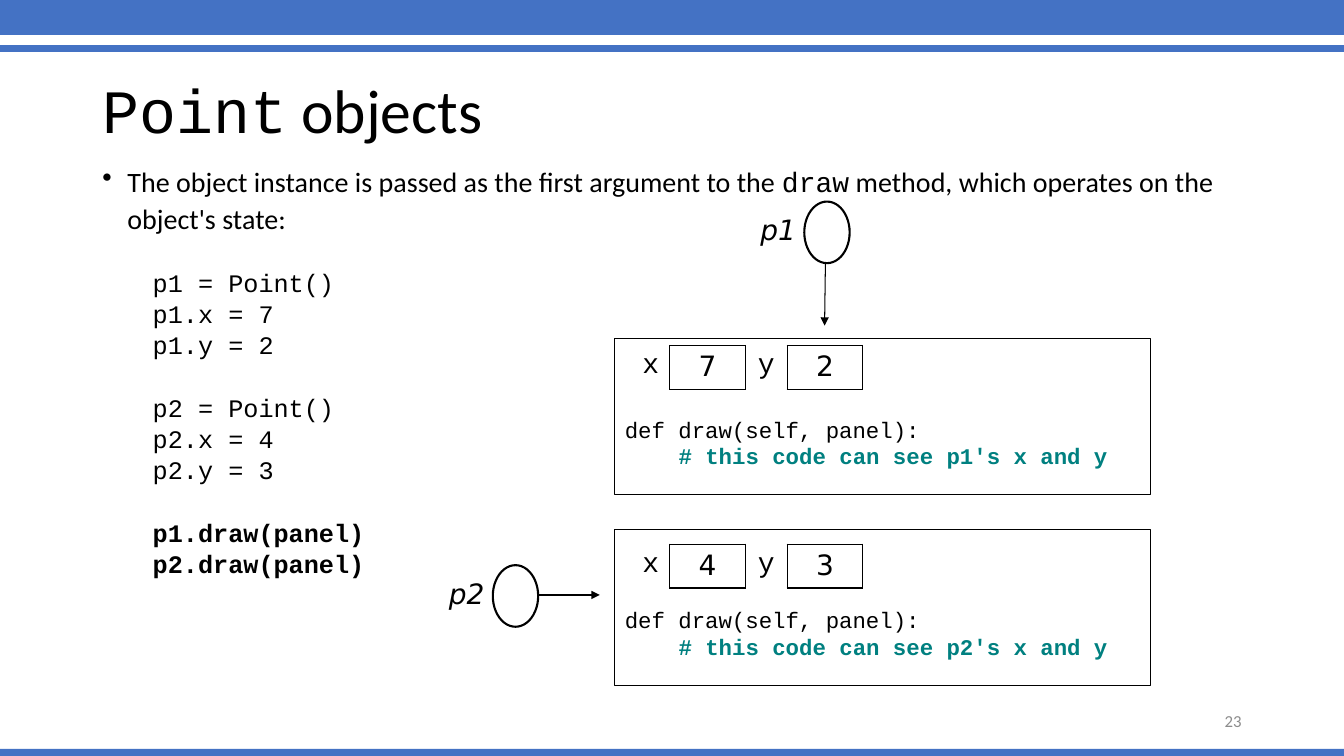
from lxml import etree
from pptx import Presentation
from pptx import util as u
from pptx.dml.color import RGBColor
from pptx.enum import shapes, text
from pptx.oxml import ns

COLOURS = {"blue": "4472C4", "black": "000000", "white": "FFFFFF",
           "teal": "008080", "grey": "8C8C8C"}
SANS, MONO, LABEL = "Calibri", "Courier New", "DejaVu Sans"
NO_STYLE_TABLE = "{2D5ABB26-0587-4C30-8999-92F81FD0307C}"
LEFT, CENTRE, RIGHT = (text.PP_ALIGN.LEFT, text.PP_ALIGN.CENTER,
                       text.PP_ALIGN.RIGHT)


def colour(name):
    return RGBColor.from_string(COLOURS[name])


def add_run(paragraph, words, font=SANS, size=20, tint="black",
            bold=False, italic=False):
    run = paragraph.add_run()
    run.text = words
    run.font.name = font
    run.font.size = u.Pt(size)
    run.font.color.rgb = colour(tint)
    run.font.bold = bold
    run.font.italic = italic


def set_indent(paragraph, left, first=0):
    properties = paragraph._p.get_or_add_pPr()
    properties.set("marL", str(u.Pt(left)))
    properties.set("indent", str(u.Pt(first)))
    return properties


def add_element(parent, tag, **attributes):
    return etree.SubElement(parent, ns.qn(tag), **attributes)


class SlideBuilder:
    def __init__(self, presentation):
        self.slide = presentation.slides.add_slide(presentation.slide_layouts[5])
        self.shapes = self.slide.shapes

    def place(self, shape, left, top, width, height):
        shape.left, shape.top = u.Pt(left), u.Pt(top)
        shape.width, shape.height = u.Pt(width), u.Pt(height)

    def title(self, *box):
        title = self.shapes.title
        self.place(title, *box)
        frame = title.text_frame
        frame.auto_size = text.MSO_AUTO_SIZE.NONE
        frame.vertical_anchor = text.MSO_ANCHOR.MIDDLE
        paragraph = frame.paragraphs[0]
        paragraph.alignment = LEFT
        paragraph.line_spacing = 0.9
        return paragraph

    def shape(self, kind, *box, fill=None, line=None):
        shape = self.shapes.add_shape(kind, *(u.Pt(value) for value in box))
        shape.shadow.inherit = False
        if fill:
            shape.fill.solid()
            shape.fill.fore_color.rgb = colour(fill)
        else:
            shape.fill.background()
        if line:
            shape.line.color.rgb = colour("black")
            shape.line.width = u.Pt(line)
        else:
            shape.line.fill.background()
        return shape

    def text_box(self, *box, align=LEFT, anchor=text.MSO_ANCHOR.TOP):
        shape = self.shapes.add_textbox(*(u.Pt(value) for value in box))
        frame = shape.text_frame
        frame.word_wrap = True
        frame.vertical_anchor = anchor
        frame.paragraphs[0].alignment = align
        return frame

    def arrow(self, *ends):
        arrow = self.shapes.add_connector(
            shapes.MSO_CONNECTOR.STRAIGHT, *(u.Pt(value) for value in ends))
        arrow.line.color.rgb = colour("black")
        arrow.line.width = u.Pt(0.75)
        add_element(arrow.line._get_or_add_ln(), "a:tailEnd", type="triangle")
        add_element(arrow._element.spPr, "a:effectLst")

    def fields(self, left, top, values):
        """Field names followed by their boxed values."""
        widths = (27, 54, 30, 54)
        frame = self.shapes.add_table(1, 4, u.Pt(left), u.Pt(top),
                                      u.Pt(sum(widths)), u.Pt(31))
        table = frame.table
        table.first_row = table.horz_banding = False
        table._tbl.tblPr.find(ns.qn("a:tableStyleId")).text = NO_STYLE_TABLE
        for index, words in enumerate(("x", values[0], "y", values[1])):
            table.columns[index].width = u.Pt(widths[index])
            cell = table.cell(0, index)
            boxed = index % 2 == 1
            cell.margin_left = cell.margin_right = u.Pt(3)
            paragraph = cell.text_frame.paragraphs[0]
            paragraph.alignment = CENTRE
            add_run(paragraph, words, font=LABEL if boxed else MONO)
            self.borders(cell, left=boxed or index == 2, right=True,
                         top=boxed, bottom=boxed)
            cell.fill.background()

    def borders(self, cell, left, right, top, bottom):
        properties = cell._tc.get_or_add_tcPr()
        sides = {"a:lnL": left, "a:lnR": right, "a:lnT": top, "a:lnB": bottom}
        for tag, shown in sides.items():
            line = add_element(properties, tag, w=str(u.Pt(1)))
            if shown:
                fill = add_element(line, "a:solidFill")
                add_element(fill, "a:srgbClr", val=COLOURS["black"])
            else:
                add_element(line, "a:noFill")

    def object_box(self, name, top, fields_top, values):
        box = self.shape(shapes.MSO_SHAPE.RECTANGLE, 439.2, top, 382.3, 111.6,
                         line=0.75)
        frame = box.text_frame
        frame.vertical_anchor = text.MSO_ANCHOR.TOP
        frame.margin_top = u.Pt(55)
        header, comment = frame.paragraphs[0], frame.add_paragraph()
        header.alignment = comment.alignment = LEFT
        add_run(header, "def draw(self, panel):", font=MONO, size=16)
        set_indent(comment, 38.4)
        add_run(comment, f"# this code can see {name}'s x and y", font=MONO,
                size=16, tint="teal", bold=True)
        self.fields(451.4, fields_top, values)

    def reference(self, name, left, top, arrow):
        """A named variable and its arrow to the object."""
        frame = self.text_box(left - 79.5, top + 4.3, 80.6, 35.3, align=RIGHT)
        add_run(frame.paragraphs[0], name, font=LABEL, italic=True)
        self.arrow(*arrow)
        self.shape(shapes.MSO_SHAPE.OVAL, left, top, 32.4, 44,
                   fill="white", line=1.5)


def main():
    presentation = Presentation()
    presentation.slide_width, presentation.slide_height = u.Pt(960), u.Pt(540)
    builder = SlideBuilder(presentation)

    # Blue bands
    for top, height in ((0, 25), (32.2, 5), (535, 5)):
        builder.shape(shapes.MSO_SHAPE.RECTANGLE, 0, top, 960, height,
                      fill="blue")

    # Title
    title = builder.title(66, 28.8, 828, 104.4)
    add_run(title, "Point", font=MONO, size=44)
    add_run(title, " objects", size=44)

    # Explanation
    body = builder.text_box(66, 111.6, 828, 374.4)
    intro = body.paragraphs[0]
    intro.line_spacing = 1.1
    add_element(set_indent(intro, 18, -18), "a:buChar", char="•")
    add_run(intro, "The object instance is passed as the first argument to the ")
    add_run(intro, "draw", font=MONO)
    add_run(intro, " method, which operates on the object's state:")

    # Code, in groups set apart by one line
    code_groups = (("p1 = Point()", "p1.x = 7", "p1.y = 2"),
                   ("p2 = Point()", "p2.x = 4", "p2.y = 3"),
                   ("p1.draw(panel)", "p2.draw(panel)"))
    for group in code_groups:
        for index, words in enumerate(group):
            paragraph = body.add_paragraph()
            paragraph.line_spacing = u.Pt(22.3)
            paragraph.space_before = u.Pt(0 if index else 22.3)
            set_indent(paragraph, 36)
            add_run(paragraph, words, font=MONO, size=18,
                    bold=group is code_groups[-1])

    # Objects and the variables that refer to them
    builder.object_box("p1", 241.9, 246.8, ("7", "2"))
    builder.object_box("p2", 378, 388.8, ("4", "3"))
    builder.reference("p2", 352, 403.7, (374.4, 425, 428.4, 425))
    builder.reference("p1", 574.5, 144, (589.7, 180, 589, 232.6))

    # Slide number
    number = builder.text_box(678, 500.5, 216, 28.8, align=RIGHT,
                              anchor=text.MSO_ANCHOR.MIDDLE)
    add_run(number.paragraphs[0], "23", size=12, tint="grey")

    presentation.save("out.pptx")


if __name__ == "__main__":
    main()
